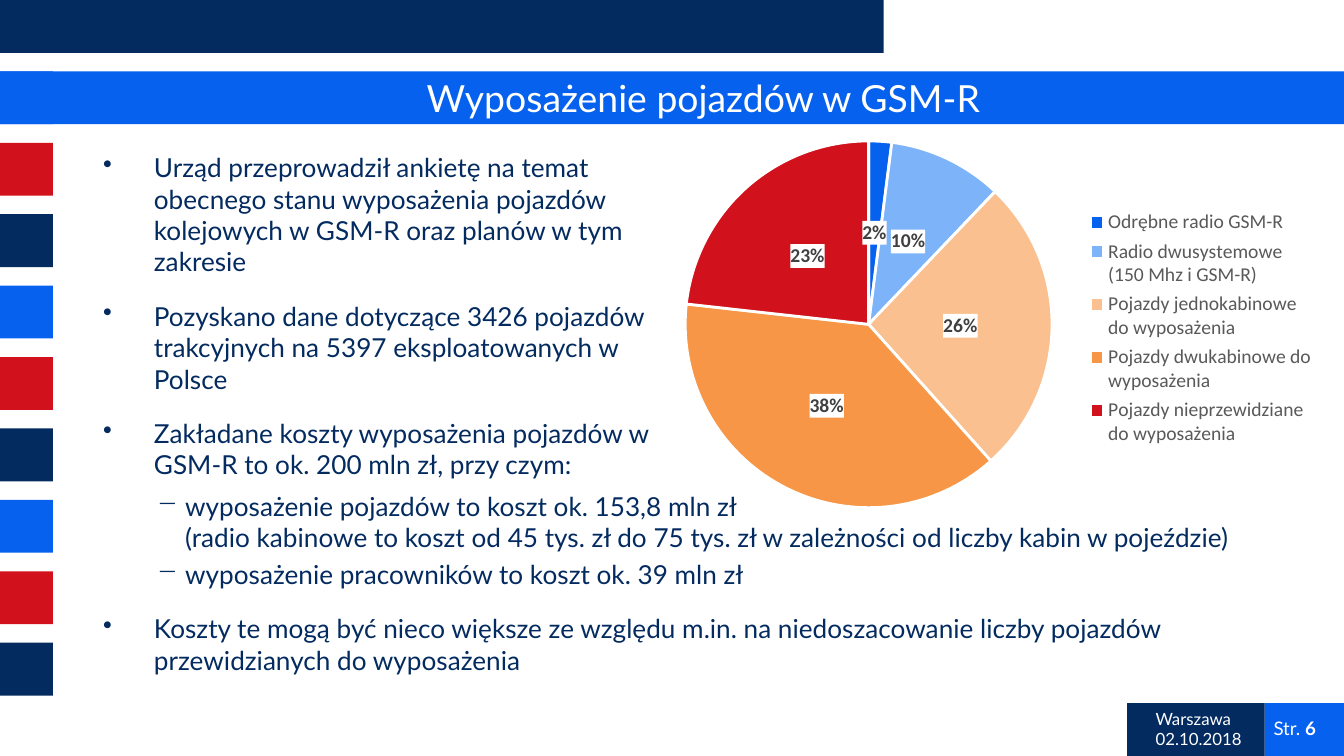
from dataclasses import dataclass

import pptx
import pptx.chart.data
import pptx.dml.color
import pptx.enum.chart
import pptx.enum.shapes
import pptx.enum.text
import pptx.oxml
import pptx.oxml.ns
import pptx.util
from lxml import etree

Cm, Pt = pptx.util.Cm, pptx.util.Pt
qn = pptx.oxml.ns.qn
PP_ALIGN = pptx.enum.text.PP_ALIGN
MIDDLE = pptx.enum.text.MSO_ANCHOR.MIDDLE


@dataclass(frozen=True)
class Theme:
    navy: str = "042B60"
    blue: str = "0661EE"
    red: str = "D1121C"
    white: str = "FFFFFF"
    legend: str = "595959"
    label: str = "404040"
    slices: tuple = ("0661EE", "7DB3F9", "FAC090", "F79646", "D1121C")
    font: str = "Lato"
    chart_font: str = "Calibri"
    title_size: float = 20
    body_size: float = 14
    chart_size: float = 10.5
    page_size: float = 10
    place_size: float = 9


T = Theme()
BLOCK, PITCH = 1, 1.35


def rgb(color):
    return pptx.dml.color.RGBColor.from_string(color)


def style(font, size, color, name=T.font, bold=False):
    font.size, font.name, font.bold = Pt(size), name, bold
    font.color.rgb = rgb(color)


def add_rect(s, box, color):
    sp = s.shapes.add_shape(pptx.enum.shapes.MSO_SHAPE.RECTANGLE, *map(Cm, box))
    sp.shadow.inherit = False
    sp.fill.solid()
    sp.fill.fore_color.rgb = rgb(color)
    sp.line.fill.background()


def add_text(s, box):
    tf = s.shapes.add_textbox(*map(Cm, box)).text_frame
    tf.word_wrap = True
    return tf


def add_bands(s, box):
    x, y, w, h = box
    colors = (T.navy, T.blue, T.red)
    for i in range(10):
        add_rect(s, (x, y + i * PITCH, BLOCK, BLOCK), colors[i % 3])
    add_rect(s, (x, y, 16.7, BLOCK), T.navy)
    add_rect(s, (x, y + PITCH, w, BLOCK), T.blue)


def add_title(s, box, text):
    sp = s.shapes.title
    sp.element.getparent().append(sp.element)
    sp.left, sp.top, sp.width, sp.height = map(Cm, box)
    tf = sp.text_frame
    tf.text = text
    tf.vertical_anchor = MIDDLE
    p = tf.paragraphs[0]
    p.alignment = PP_ALIGN.CENTER
    style(p.runs[0].font, T.title_size, T.white)


def add_footer(s, box, place, page):
    x, y, w, h = box
    split = 2.6
    add_rect(s, (x + split, y, w - split, h), T.blue)
    add_rect(s, (x, y, split, h), T.navy)

    tf = add_text(s, (x + split - 0.08, y + 0.2, 1.78, 0.56))
    tf.vertical_anchor = MIDDLE
    p = tf.paragraphs[0]
    p.text = "Str. "
    r = p.add_run()
    r.text = page
    style(p.runs[0].font, T.page_size, T.white)
    style(r.font, T.page_size, T.white, bold=True)

    tf = add_text(s, (x + 0.29, y + 0.2, 2.31, 0.56))
    tf.vertical_anchor = MIDDLE
    tf.text = place
    for p in tf.paragraphs:
        for r in p.runs:
            style(r.font, T.place_size, T.white)
            r.font.element.set("spc", "20") if hasattr(r.font, "element") else None


def add_bullets(s, box, items):
    tf = add_text(s, box)
    tf.text = "\n".join(text for level, text in items)
    for i, (p, (level, text)) in enumerate(zip(tf.paragraphs, items)):
        margin, hang, mark = ((0.96, 0.96, "•"), (1.55, 0.53, "−"))[level]
        p.level = level
        pPr = p.runs[0].font and p.runs[0]._r.getparent().get_or_add_pPr()
        pPr.set("marL", str(Cm(margin)))
        pPr.set("indent", str(-Cm(hang)))
        etree.SubElement(pPr, qn("a:buChar")).set("char", mark)
        if i:
            p.space_before = Pt(2.8 if level else 12.4)
        for r in p.runs:
            style(r.font, T.body_size, T.navy)


def layout_xml(x, y, w, h, inner=False):
    layout = etree.Element(qn("c:layout"))
    manual = etree.SubElement(layout, qn("c:manualLayout"))
    values = [("xMode", "edge"), ("yMode", "edge"), ("x", x), ("y", y), ("w", w), ("h", h)]
    if inner:
        values.insert(0, ("layoutTarget", "inner"))
    for tag, value in values:
        etree.SubElement(manual, qn(f"c:{tag}")).set("val", str(value))
    return layout


def add_pie(s, box, shares):
    data = pptx.chart.data.CategoryChartData()
    data.categories = list(shares)
    data.add_series("Pojazdy", list(shares.values()))
    kind = pptx.enum.chart.XL_CHART_TYPE.PIE
    chart = s.shapes.add_chart(kind, *map(Cm, box), data).chart
    chart.has_title = False
    style(chart.font, T.chart_size, T.legend, T.chart_font)
    chart.has_legend = True
    chart.legend.include_in_layout = False
    style(chart.legend.font, T.chart_size, T.legend, T.chart_font)

    plot = chart.plots[0]
    plot.vary_by_categories = True
    series = plot.series[0]
    for i, color in enumerate(T.slices):
        fmt = series.points[i].format
        fmt.fill.solid()
        fmt.fill.fore_color.rgb = rgb(color)
        fmt.line.color.rgb = rgb(T.white)
        fmt.line.width = Pt(1.5)

    labels = series.data_labels
    labels.show_value, labels.show_percentage = False, True
    labels.number_format, labels.number_format_is_linked = "0%", False
    labels.position = pptx.enum.chart.XL_LABEL_POSITION.CENTER
    style(labels.font, T.chart_size, T.label, T.chart_font, True)

    root = chart.element
    spPr = etree.Element(qn("c:spPr"))
    fill = etree.SubElement(spPr, qn("a:solidFill"))
    etree.SubElement(fill, qn("a:srgbClr")).set("val", T.white)
    root.find(f".//{qn('c:dLbls')}/{qn('c:txPr')}").addprevious(spPr)

    area, legend = (root.find(f".//{qn(tag)}") for tag in ("c:plotArea", "c:legend"))
    for part in (area, legend):
        for old in part.findall(qn("c:layout")):
            part.remove(old)
    area.insert(0, layout_xml(0.05, 0.04, 0.55, 0.91, True))
    legend.find(qn("c:overlay")).addprevious(layout_xml(0.65, 0.2, 0.34, 0.61))


def main():
    prs = pptx.Presentation()
    prs.slide_width, prs.slide_height = Cm(25.4), Cm(14.29)
    s = prs.slides.add_slide(prs.slide_layouts[5])
    add_bands(s, (0, 0, 25.4, 14.29))
    add_footer(s, (21.3, 13.29, 4.1, BLOCK), "Warszawa\n02.10.2018", "6")
    add_bullets(s, (1.7, 2.74, 11, 10.41), [
        (0, "Urząd przeprowadził ankietę na temat obecnego stanu wyposażenia pojazdów "
            "kolejowych w GSM-R oraz planów w tym zakresie"),
        (0, "Pozyskano dane dotyczące 3426 pojazdów trakcyjnych na 5397 eksploatowanych w Polsce"),
        (0, "Zakładane koszty wyposażenia pojazdów w GSM-R to ok. 200 mln zł, przy czym:"),
    ])
    add_title(s, (1.7, PITCH, 23.19, BLOCK), "Wyposażenie pojazdów w GSM-R")
    add_pie(s, (12.29, 2.36, 12.7, 7.62), {
        "Odrębne radio GSM-R": 2,
        "Radio dwusystemowe (150 Mhz i GSM-R)": 10,
        "Pojazdy jednokabinowe do wyposażenia": 26,
        "Pojazdy dwukabinowe do wyposażenia": 38,
        "Pojazdy nieprzewidziane do wyposażenia": 23,
    })
    add_bullets(s, (1.7, 9.14, 22.61, 3.84), [
        (1, "wyposażenie pojazdów to koszt ok. 153,8 mln zł\v(radio kabinowe to koszt "
            "od 45 tys. zł do 75 tys. zł w zależności od liczby kabin w pojeździe)"),
        (1, "wyposażenie pracowników to koszt ok. 39 mln zł"),
        (0, "Koszty te mogą być nieco większe ze względu m.in. na niedoszacowanie liczby "
            "pojazdów przewidzianych do wyposażenia"),
    ])
    prs.save("out.pptx")


if __name__ == "__main__":
    main()
